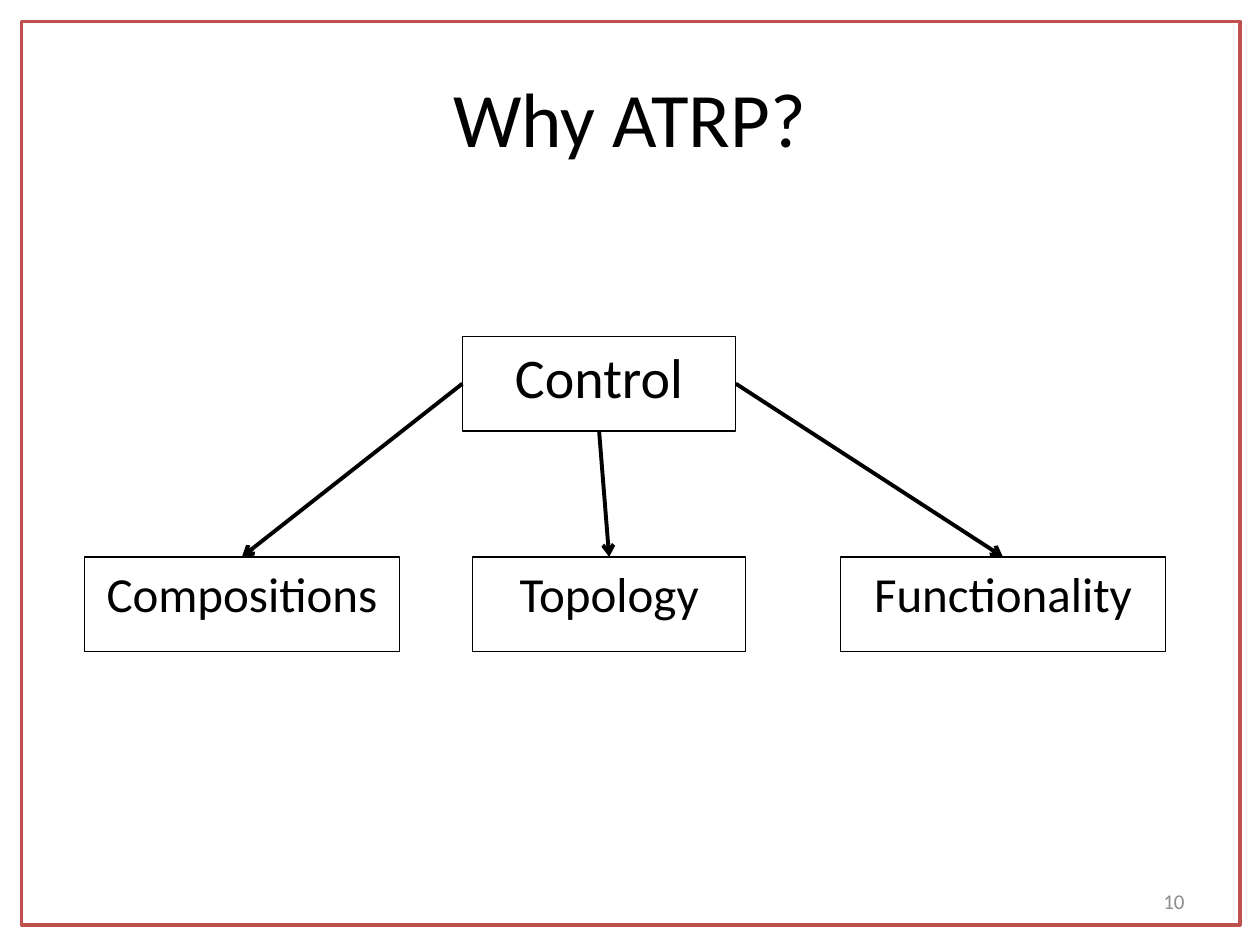
"""Build the "Why ATRP?" slide: one control box branching to three properties."""
from lxml import etree
from pptx import Presentation
from pptx.dml.color import RGBColor
from pptx.enum.shapes import MSO_CONNECTOR, MSO_SHAPE
from pptx.enum.text import MSO_ANCHOR, PP_ALIGN
from pptx.oxml.ns import qn
from pptx.util import Inches, Pt

BLACK = RGBColor(0x00, 0x00, 0x00)
WHITE = RGBColor(0xFF, 0xFF, 0xFF)
RED = RGBColor(0xC0, 0x50, 0x4D)
GRAY = RGBColor(0x8C, 0x8C, 0x8C)
RECTANGLE = MSO_SHAPE.RECTANGLE
STRAIGHT = MSO_CONNECTOR.STRAIGHT
TOP, MIDDLE = MSO_ANCHOR.TOP, MSO_ANCHOR.MIDDLE
CENTER, RIGHT = PP_ALIGN.CENTER, PP_ALIGN.RIGHT
TOP_SITE, LEFT_SITE, BOTTOM_SITE, RIGHT_SITE = range(4)
BOX_HEIGHT = 0.75
BRANCH_TOP = 4.42


def write_text(shape, text, size, color, alignment, anchor):
    frame = shape.text_frame
    frame.word_wrap = True
    frame.vertical_anchor = anchor
    paragraph = frame.paragraphs[0]
    paragraph.text = text
    paragraph.alignment = alignment
    paragraph.font.name = "Calibri"
    paragraph.font.size = Pt(size)
    paragraph.font.color.rgb = color


def add_box(slide, text, left, top, width, size):
    box = slide.shapes.add_shape(
        RECTANGLE, Inches(left), Inches(top), Inches(width), Inches(BOX_HEIGHT)
    )
    box.shadow.inherit = False
    box.fill.background()
    box.line.color.rgb = BLACK
    box.line.width = Pt(0.75)
    write_text(box, text, size, BLACK, CENTER, TOP)
    return box


presentation = Presentation()
presentation.slide_width = Inches(10)
presentation.slide_height = Inches(7.5)
slide = presentation.slides.add_slide(presentation.slide_layouts[6])

border = slide.shapes.add_shape(
    RECTANGLE, Inches(0.17), Inches(0.17), Inches(9.67), Inches(7.17)
)
border.shadow.inherit = False
border.fill.solid()
border.fill.fore_color.rgb = WHITE
border.line.color.rgb = RED
border.line.width = Pt(2)

title = slide.shapes.add_textbox(Inches(0.5), Inches(0.3), Inches(9), Inches(1.25))
write_text(title, "Why ATRP?", 44, BLACK, CENTER, MIDDLE)

control = add_box(slide, "Control", 3.67, 2.67, 2.17, 32)

branches = [
    ("Compositions", 0.67, 2.5, LEFT_SITE),
    ("Topology", 3.75, 2.17, BOTTOM_SITE),
    ("Functionality", 6.67, 2.58, RIGHT_SITE),
]
for text, left, width, control_site in branches:
    branch = add_box(slide, text, left, BRANCH_TOP, width, 28)
    arrow = slide.shapes.add_connector(STRAIGHT, 0, 0, 0, 0)
    arrow.begin_connect(control, control_site)
    arrow.end_connect(branch, TOP_SITE)
    arrow.line.color.rgb = BLACK
    arrow.line.width = Pt(2.25)
    etree.SubElement(arrow.line._get_or_add_ln(), qn("a:tailEnd"), type="arrow")
    etree.SubElement(arrow._element.spPr, qn("a:effectLst"))

slide_number = slide.shapes.add_textbox(
    Inches(7.17), Inches(6.95), Inches(2.33), Inches(0.4)
)
write_text(slide_number, "10", 12, GRAY, RIGHT, MIDDLE)

presentation.save("out.pptx")
